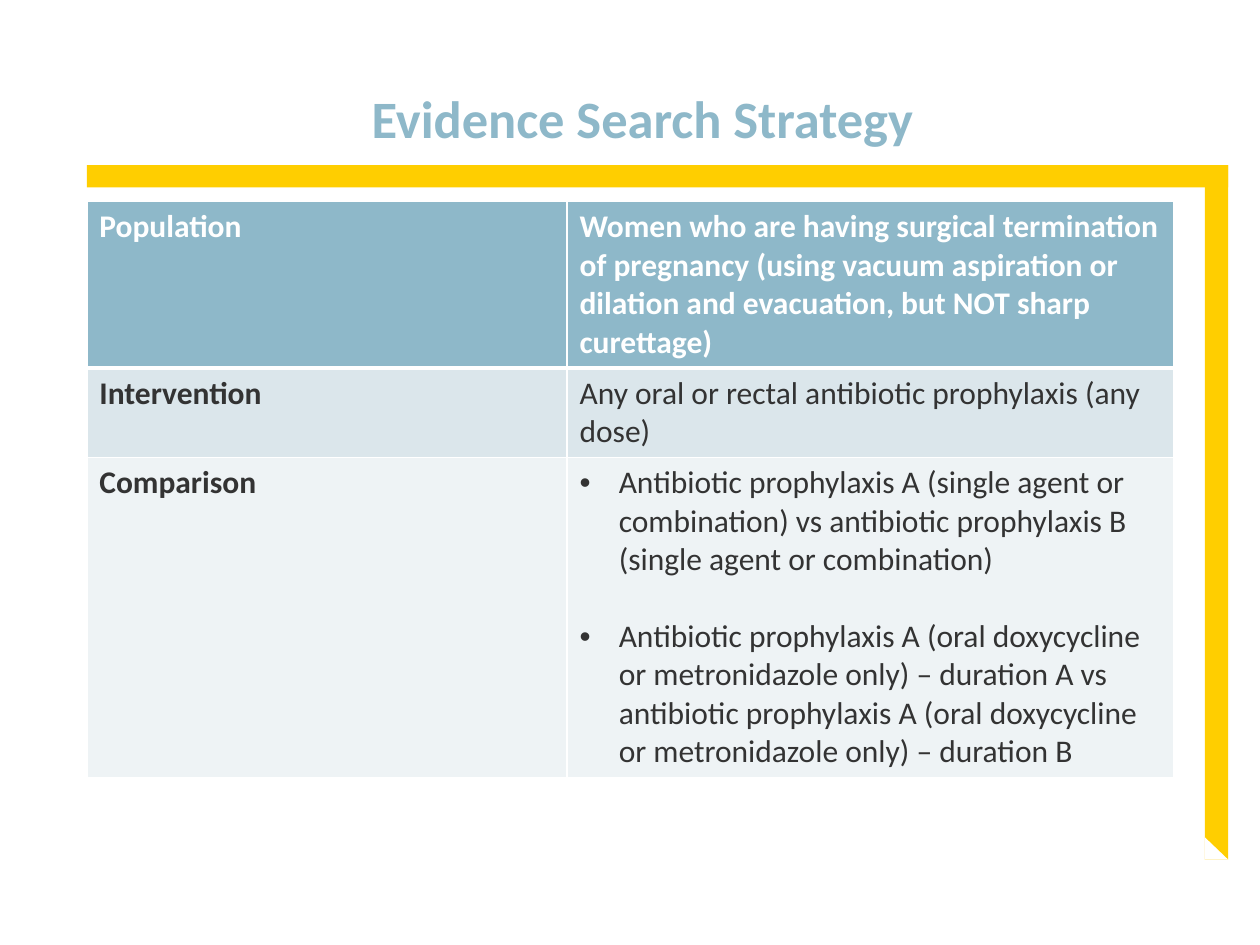
from lxml.etree import SubElement
from pptx import Presentation
from pptx.dml.color import RGBColor
from pptx.enum.shapes import MSO_SHAPE as Shape
from pptx.enum.text import MSO_ANCHOR as Anchor, MSO_AUTO_SIZE as AutoSize, PP_ALIGN as Align
from pptx.oxml.ns import qn
from pptx.util import Cm, Pt

BLUE = RGBColor(0x8E, 0xB8, 0xC9)
PALE_BLUE = RGBColor(0xDB, 0xE6, 0xEB)
PALEST_BLUE = RGBColor(0xEE, 0xF3, 0xF5)
YELLOW = RGBColor(0xFF, 0xCE, 0x00)
WHITE = RGBColor(0xFF, 0xFF, 0xFF)
DARK = RGBColor(0x33, 0x33, 0x33)
FONT = "Calibri"


def set_font(paragraph, size, color, bold):
    font = paragraph.font
    font.name, font.size, font.bold = FONT, Pt(size), bold
    font.color.rgb = color


def add_border(cell, side, width):
    line = SubElement(cell._tc.get_or_add_tcPr(), qn(f"a:{side}"), w=str(Pt(width)))
    fill = SubElement(line, qn("a:solidFill"))
    SubElement(fill, qn("a:srgbClr"), val=str(WHITE))


presentation = Presentation()
presentation.slide_width, presentation.slide_height = Cm(25.4), Cm(19.05)
slide = presentation.slides.add_slide(presentation.slide_layouts[5])

# Yellow frame with a slanted lower end
frame_parts = [
    (Shape.RECTANGLE, 1.75, 3.33, 23.01, 0.45, YELLOW),
    (Shape.RECTANGLE, 24.29, 3.33, 0.47, 14, YELLOW),
    (Shape.ISOSCELES_TRIANGLE, 24.29, 16.88, 0.47, 0.45, WHITE),
]
for kind, left, top, width, height, color in frame_parts:
    shape = slide.shapes.add_shape(kind, Cm(left), Cm(top), Cm(width), Cm(height))
    shape.shadow.inherit = False
    shape.fill.solid()
    shape.fill.fore_color.rgb = color
    shape.line.fill.background()
    if kind == Shape.ISOSCELES_TRIANGLE:
        shape.adjustments[0] = 0

# Title
title = slide.shapes.title
title.left, title.top, title.width, title.height = Cm(6.58), Cm(0.51), Cm(18.06), Cm(2.64)
title.text_frame.text = "Evidence Search Strategy"
title.text_frame.auto_size = AutoSize.NONE
title.text_frame.vertical_anchor = Anchor.BOTTOM
paragraph = title.text_frame.paragraphs[0]
paragraph.alignment = Align.LEFT
paragraph.line_spacing = 0.9
paragraph._p.get_or_add_pPr().set("marL", str(Cm(0.66)))
set_font(paragraph, 30, BLUE, True)

# Search strategy table: label, description lines, row height, fill
rows = [
    ("Population",
     ["Women who are having surgical termination of pregnancy (using vacuum "
      "aspiration or dilation and evacuation, but NOT sharp curettage)"],
     3.32, BLUE),
    ("Intervention",
     ["Any oral or rectal antibiotic prophylaxis (any dose)"],
     1.8, PALE_BLUE),
    ("Comparison",
     ["Antibiotic prophylaxis A (single agent or combination) vs antibiotic "
      "prophylaxis B (single agent or combination)",
      "Antibiotic prophylaxis A (oral doxycycline or metronidazole only) – duration A vs "
      "antibiotic prophylaxis A (oral doxycycline or metronidazole only) – duration B"],
     6.45, PALEST_BLUE),
]
table = slide.shapes.add_table(
    len(rows), 2, Cm(1.75), Cm(4.06), Cm(21.92), Cm(11.57)).table
table.columns[0].width, table.columns[1].width = Cm(9.68), Cm(12.24)

for row_index, (label, lines, height, fill_color) in enumerate(rows):
    table.rows[row_index].height = Cm(height)
    is_header = row_index == 0
    for column_index, texts in enumerate([[label], lines]):
        cell = table.cell(row_index, column_index)
        for side in ("lnL", "lnR", "lnT", "lnB"):
            is_thick = (side, row_index) in (("lnB", 0), ("lnT", 1))
            add_border(cell, side, 3 if is_thick else 1)
        cell.fill.solid()
        cell.fill.fore_color.rgb = fill_color
        cell.text_frame.text = "\n".join(texts)
        for index, paragraph in enumerate(cell.text_frame.paragraphs):
            if index > 0:
                paragraph.space_before = Pt(22)
            if len(texts) > 1:
                properties = paragraph._p.get_or_add_pPr()
                properties.set("marL", str(Cm(0.79)))
                properties.set("indent", str(-Cm(0.79)))
                SubElement(properties, qn("a:buFont"), typeface="Arial")
                SubElement(properties, qn("a:buChar"), char="•")
            set_font(paragraph, 18, WHITE if is_header else DARK,
                     is_header or column_index == 0)

presentation.save("out.pptx")
